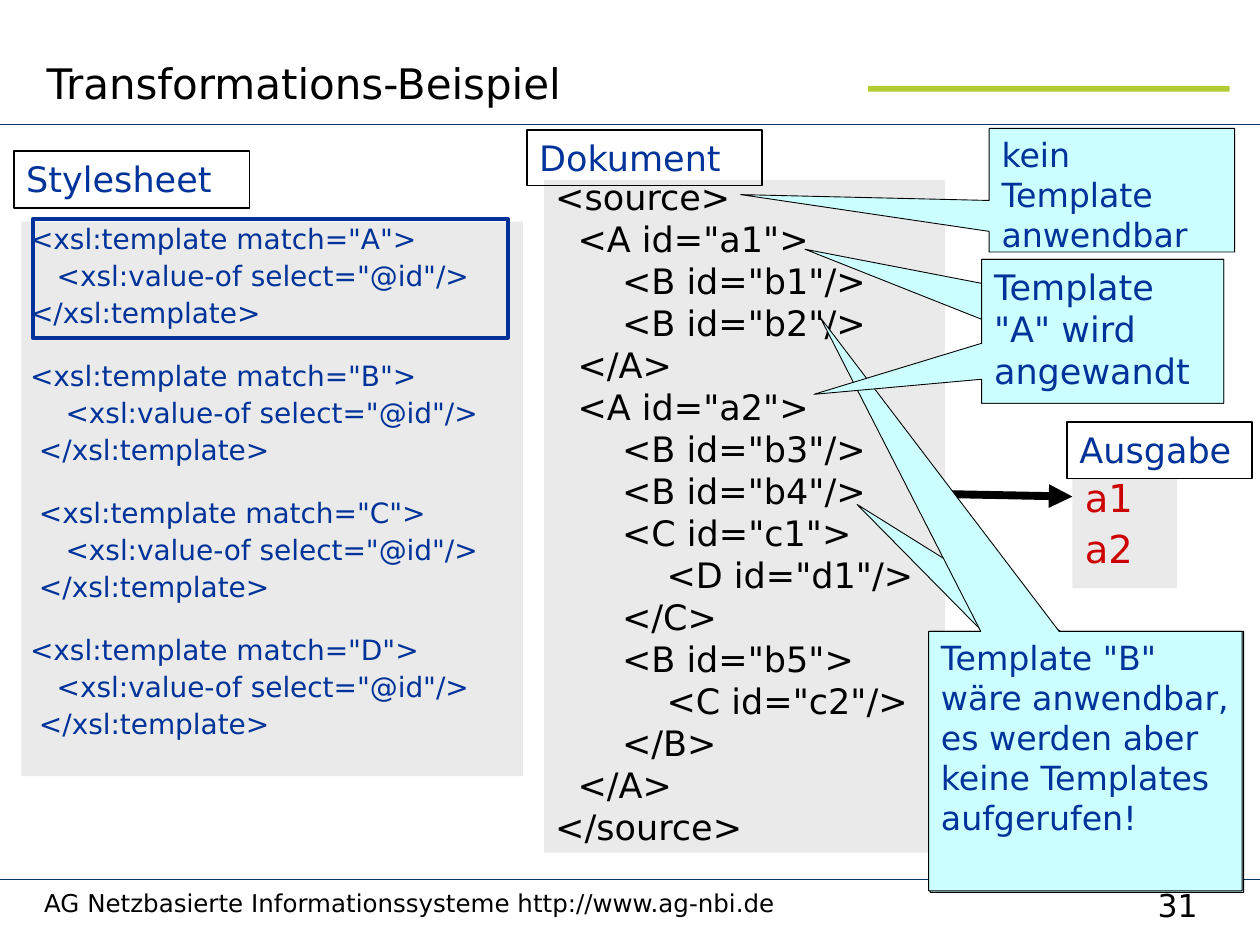
from lxml.etree import SubElement
from pptx import Presentation
from pptx.dml.color import RGBColor
from pptx.enum.shapes import MSO_CONNECTOR, MSO_SHAPE
from pptx.enum.text import MSO_ANCHOR, PP_ALIGN
from pptx.oxml.ns import qn
from pptx.util import Cm, Pt

FONT = "DejaVu Sans"
BLACK = RGBColor(0x00, 0x00, 0x00)
WHITE = RGBColor(0xFF, 0xFF, 0xFF)
BLUE = RGBColor(0x00, 0x33, 0x99)
NAVY = RGBColor(0x00, 0x33, 0x66)
RED = RGBColor(0xCC, 0x00, 0x00)
GREEN = RGBColor(0xB2, 0xCC, 0x33)
GREY = RGBColor(0xEA, 0xEA, 0xEA)
CYAN = RGBColor(0xCC, 0xFF, 0xFF)

SLIDE_WIDTH, SLIDE_HEIGHT = 25.4, 19.05

DOCUMENT_CODE = """\
 <source>
   <A id="a1">
       <B id="b1"/>
       <B id="b2"/>
   </A>
   <A id="a2">
       <B id="b3"/>
       <B id="b4"/>
       <C id="c1">
           <D id="d1"/>
       </C>
       <B id="b5">
           <C id="c2"/>
       </B>
   </A>
 </source>"""

STYLESHEET_CODE = """\
 <xsl:template match="A">
    <xsl:value-of select="@id"/>
 </xsl:template>
 <xsl:template match="B">
     <xsl:value-of select="@id"/>
  </xsl:template>
  <xsl:template match="C">
     <xsl:value-of select="@id"/>
  </xsl:template>
 <xsl:template match="D">
    <xsl:value-of select="@id"/>
  </xsl:template>"""


def write(frame, text, size, color, align=PP_ALIGN.LEFT):
    frame.word_wrap = True
    frame.text = text
    for paragraph in frame.paragraphs:
        paragraph.alignment = align
        for run in paragraph.runs:
            run.font.name = FONT
            run.font.size = Pt(size)
            run.font.color.rgb = color


def add_text(slide, box, text, size, align=PP_ALIGN.LEFT, anchor=MSO_ANCHOR.TOP):
    frame = slide.shapes.add_textbox(*map(Cm, box)).text_frame
    write(frame, text, size, BLACK, align)
    frame.vertical_anchor = anchor


def add_box(slide, box, fill=None, line=None, width=1, kind=MSO_SHAPE.RECTANGLE):
    shape = slide.shapes.add_shape(kind, *map(Cm, box))
    shape.shadow.inherit = False
    if fill is None:
        shape.fill.background()
    else:
        shape.fill.solid()
        shape.fill.fore_color.rgb = fill
    if line is None:
        shape.line.fill.background()
    else:
        shape.line.color.rgb = line
        shape.line.width = Pt(width)
    shape.text_frame.vertical_anchor = MSO_ANCHOR.TOP
    return shape


def add_panel(slide, box, text, size, color, gap, inset=0, spacing=None):
    """Grey panel with one paragraph per line of text."""
    frame = add_box(slide, box, GREY).text_frame
    frame.margin_top = frame.margin_right = frame.margin_bottom = 0
    frame.margin_left = Cm(inset)
    write(frame, text, size, color)
    for paragraph in frame.paragraphs:
        if spacing:
            paragraph.line_spacing = spacing
    for paragraph in frame.paragraphs[1:]:
        paragraph.space_before = Pt(gap)
    return frame


def add_label(slide, box, text, fill=None):
    write(add_box(slide, box, fill, BLACK).text_frame, text, 20, BLUE)


def add_callout(slide, box, pointer, text="", size=20):
    callout = add_box(slide, box, CYAN, BLACK, 0.5, MSO_SHAPE.RECTANGULAR_CALLOUT)
    callout.adjustments[0], callout.adjustments[1] = pointer
    if text:
        write(callout.text_frame, text, size, BLUE)


def add_line(slide, start, end, color, width, arrow=False):
    line = slide.shapes.add_connector(
        MSO_CONNECTOR.STRAIGHT, *map(Cm, (*start, *end)))
    line.line.color.rgb = color
    line.line.width = Pt(width)
    if arrow:
        SubElement(line.line._get_or_add_ln(), qn("a:tailEnd"), type="triangle")
    SubElement(line._element.spPr, qn("a:effectLst"))


def main():
    presentation = Presentation()
    presentation.slide_width = Cm(SLIDE_WIDTH)
    presentation.slide_height = Cm(SLIDE_HEIGHT)
    slide = presentation.slides.add_slide(presentation.slide_layouts[6])

    # Frame: accent bar, rules, footer and title
    add_box(slide, (17.5, 1.73, 7.29, 0.12), GREEN)
    for y in (17.73, 2.51):
        add_line(slide, (0, y), (SLIDE_WIDTH, y), NAVY, 1)
    add_text(slide, (22.71, 17.73, 2.06, 1.02), "31", 18, PP_ALIGN.CENTER)
    add_text(slide, (0.64, 17.78, 22.07, 0.84),
             "AG Netzbasierte Informationssysteme http://www.ag-nbi.de", 14)
    add_text(slide, (0.69, 0, 20.4, 2.31), "Transformations-Beispiel", 24,
             anchor=MSO_ANCHOR.BOTTOM)

    # Code panels and output
    add_line(slide, (19.05, 9.96), (21.62, 10.01), BLACK, 4.5, arrow=True)
    add_panel(slide, (10.97, 3.63, 8.08, 13.56), DOCUMENT_CODE, 20, BLACK, 2.4,
              spacing=0.9)
    stylesheet = add_panel(slide, (0.43, 4.47, 10.11, 11.18), STYLESHEET_CODE,
                           16, BLUE, 2)
    for template_start in stylesheet.paragraphs[3::3]:
        template_start.space_before = Pt(16.6)
    add_panel(slide, (21.62, 9.55, 2.11, 2.31), "a1\na2", 22, RED, 3, inset=0.25)
    add_label(slide, (0.28, 3.05, 4.75, 1.14), "Stylesheet")

    # Callouts, those sharing a box point at two places
    add_callout(slide, (19.94, 2.59, 4.95, 2.49), (-1.512, 0.036),
                "kein Template anwendbar", 19)
    template_a = (19.79, 5.23, 4.88, 2.9)
    add_callout(slide, template_a, (-1.23, -0.571))
    add_callout(slide, (18.75, 12.73, 6.32, 5.26), (-0.733, -0.987))
    add_callout(slide, (18.72, 12.73, 6.32, 5.23), (-0.846, -1.711),
                'Template "B" wäre anwendbar, es werden aber keine Templates '
                'aufgerufen!', 19)
    add_callout(slide, template_a, (-1.193, 0.438),
                'Template "A" wird angewandt')

    # Highlight of the applied template and remaining labels
    add_box(slide, (0.66, 4.42, 9.58, 2.39), line=BLUE, width=2.25)
    add_label(slide, (10.62, 2.62, 4.75, 1.12), "Dokument")
    add_label(slide, (21.51, 8.51, 3.73, 1.14), "Ausgabe", WHITE)

    presentation.save("out.pptx")


if __name__ == "__main__":
    main()
